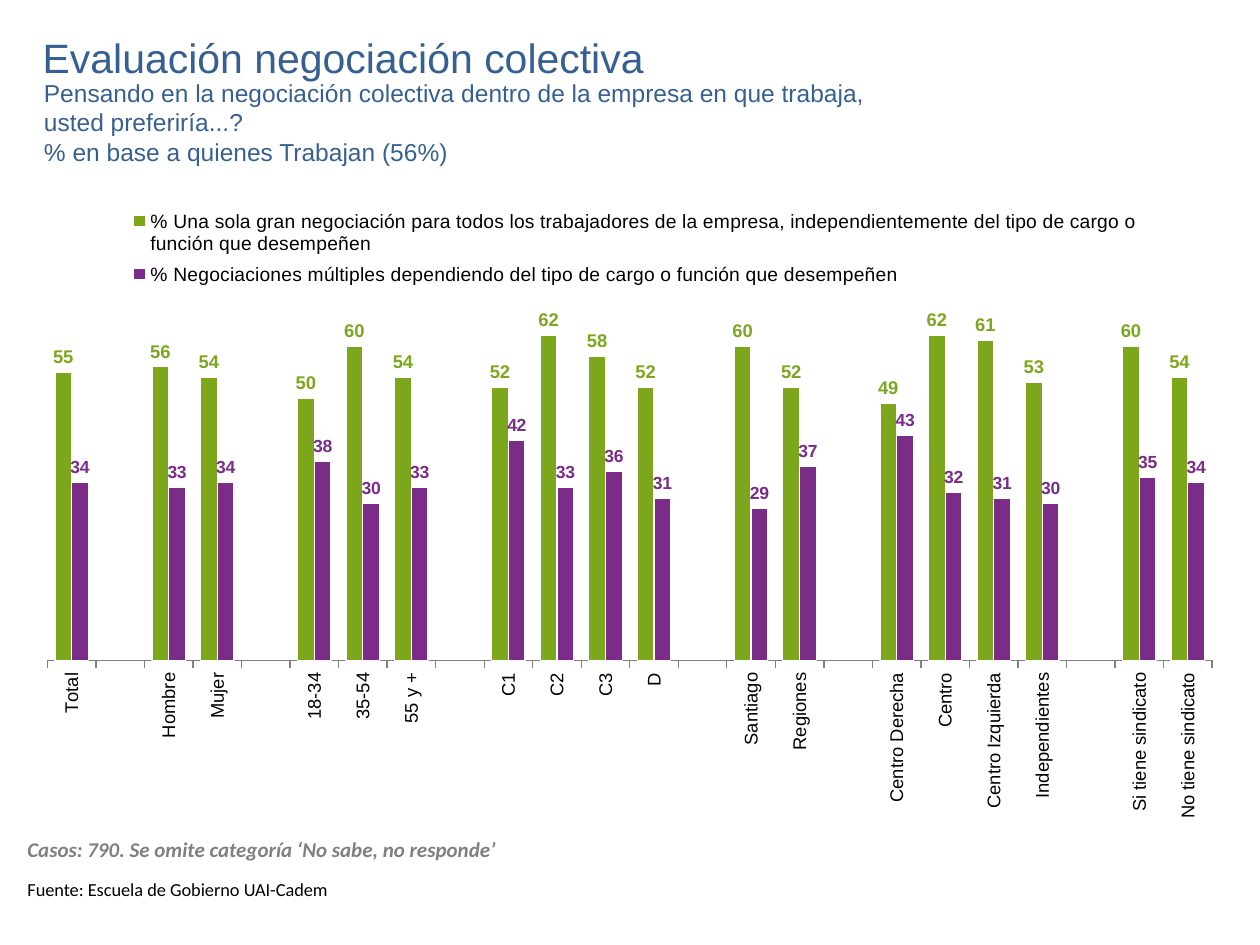
import pptx
import pptx.chart.data
import pptx.dml.color
import pptx.enum.chart
import pptx.enum.text
import pptx.oxml
import pptx.oxml.ns
import pptx.util

Pt = pptx.util.Pt
COLORS = {"blue": "376092", "green": "7CA71D", "purple": "7B2C88",
          "gray": "808080", "black": "000000", "white": "FFFFFF"}

# Each group: category, single negotiation, multiple negotiations
GROUPS = [
    [("Total", 55, 34)],
    [("Hombre", 56, 33), ("Mujer", 54, 34)],
    [("18-34", 50, 38), ("35-54", 60, 30), ("55 y +", 54, 33)],
    [("C1", 52, 42), ("C2", 62, 33), ("C3", 58, 36), ("D", 52, 31)],
    [("Santiago", 60, 29), ("Regiones", 52, 37)],
    [("Centro Derecha", 49, 43), ("Centro", 62, 32),
     ("Centro Izquierda", 61, 31), ("Independientes", 53, 30)],
    [("Si tiene sindicato", 60, 35), ("No tiene sindicato", 54, 34)],
]
# Series name, colour, label size
SERIES = [
    ("% Una sola gran negociación para todos los trabajadores de la empresa, "
     "independientemente del tipo de cargo o función que desempeñen", "green", 10.5),
    ("% Negociaciones múltiples dependiendo del tipo de cargo o función "
     "que desempeñen", "purple", 10),
]


def rgb(name):
    return pptx.dml.color.RGBColor.from_string(COLORS[name])


def style_font(font, size, color, name="Arial", bold=False, italic=False):
    font.name, font.size = name, Pt(size)
    font.bold, font.italic = bold, italic
    font.color.rgb = rgb(color)


def add_text(slide, box, lines, size, color, wrap=True, middle=False, **style):
    frame = slide.shapes.add_textbox(*map(Pt, box)).text_frame
    frame.word_wrap = wrap
    if middle:
        frame.vertical_anchor = pptx.enum.text.MSO_ANCHOR.MIDDLE
    frame.text = "\n".join(lines)
    for paragraph in frame.paragraphs:
        for run in paragraph.runs:
            style_font(run.font, size, color, **style)


def set_layout(parent, x, y, w, h, inner=False):
    """Place the plot area or the legend by fractions of the chart."""
    for old in parent.findall(pptx.oxml.ns.qn("c:layout")):
        parent.remove(old)
    target = '<c:layoutTarget val="inner"/>' if inner else ""
    layout = pptx.oxml.parse_xml(
        f'<c:layout {pptx.oxml.ns.nsdecls("c")}><c:manualLayout>{target}'
        '<c:xMode val="edge"/><c:yMode val="edge"/>'
        f'<c:x val="{x}"/><c:y val="{y}"/><c:w val="{w}"/><c:h val="{h}"/>'
        '</c:manualLayout></c:layout>')
    parent.insert(0 if inner else 1, layout)


def chart_data():
    rows = []
    for group in GROUPS:
        if rows:
            rows.append(("", None, None))  # gap between groups
        rows.extend(group)
    categories, *values = zip(*rows)
    data = pptx.chart.data.CategoryChartData(number_format="#,##0")
    data.categories = categories
    for (name, _, _), series_values in zip(SERIES, values):
        data.add_series(name, series_values)
    return data


def style_axes(chart):
    groups_axis, percent_axis = chart.category_axis, chart.value_axis
    percent_axis.minimum_scale, percent_axis.maximum_scale = 0, 70
    percent_axis.has_major_gridlines = False
    percent_axis.visible = False
    groups_axis.format.line.color.rgb = rgb("gray")
    groups_axis.major_tick_mark = pptx.enum.chart.XL_TICK_MARK.OUTSIDE
    groups_axis.tick_label_position = pptx.enum.chart.XL_TICK_LABEL_POSITION.LOW
    style_font(groups_axis.tick_labels.font, 10.5, "black")
    body = groups_axis._element.find(".//" + pptx.oxml.ns.qn("a:bodyPr"))
    body.set("rot", "-5400000")
    body.set("vert", "horz")


def style_series(series, color, label_size):
    series.format.fill.solid()
    series.format.fill.fore_color.rgb = rgb(color)
    series.format.line.color.rgb = rgb("white")
    series.format.line.width = Pt(0.75)
    labels = series.data_labels
    labels.show_value = True
    labels.number_format, labels.number_format_is_linked = "#,##0", False
    labels.position = pptx.enum.chart.XL_LABEL_POSITION.OUTSIDE_END
    style_font(labels.font, label_size, color, bold=True)


def add_preference_chart(slide, box):
    chart = slide.shapes.add_chart(
        pptx.enum.chart.XL_CHART_TYPE.COLUMN_CLUSTERED,
        *map(Pt, box), chart_data()).chart
    chart.has_title = False
    style_font(chart.font, 10, "black")
    style_axes(chart)

    columns = chart.plots[0]
    columns.gap_width, columns.overlap = 90, 0
    columns.vary_by_categories = False
    for series, (_, color, label_size) in zip(columns.series, SERIES):
        style_series(series, color, label_size)

    chart.has_legend = True
    chart.legend.position = pptx.enum.chart.XL_LEGEND_POSITION.TOP
    chart.legend.include_in_layout = False
    style_font(chart.legend.font, 11, "black")

    set_layout(chart.legend._element, 0.07, 0.01, 0.86, 0.14)
    plot_area = chart._chartSpace.find(".//" + pptx.oxml.ns.qn("c:plotArea"))
    set_layout(plot_area, 0.01, 0.15, 0.97, 0.56, inner=True)


def main():
    deck = pptx.Presentation()
    deck.slide_width, deck.slide_height = Pt(720), Pt(540)
    slide = deck.slides.add_slide(deck.slide_layouts[6])

    # Question and title
    add_text(slide, (18, 41, 614, 58), [
        "Pensando en la negociación colectiva dentro de la empresa en que trabaja,",
        "usted preferiría...?",
        "% en base a quienes Trabajan (56%)"], 14, "blue")
    add_text(slide, (17.3, 9.4, 581, 46), ["Evaluación negociación colectiva"],
             23.4, "blue", middle=True)

    # Results by group
    add_preference_chart(slide, (20.2, 111.6, 686.2, 374.4))

    # Sample note and source
    add_text(slide, (8.6, 474.5, 330, 21.6),
             ["Casos: 790. Se omite categoría ‘No sabe, no responde’"],
             12, "gray", wrap=False, name="Calibri", bold=True, italic=True)
    add_text(slide, (8.6, 498.2, 189.4, 20.2),
             ["Fuente: Escuela de Gobierno UAI-Cadem"],
             10.5, "black", wrap=False, name="Calibri")

    deck.save("out.pptx")


if __name__ == "__main__":
    main()
